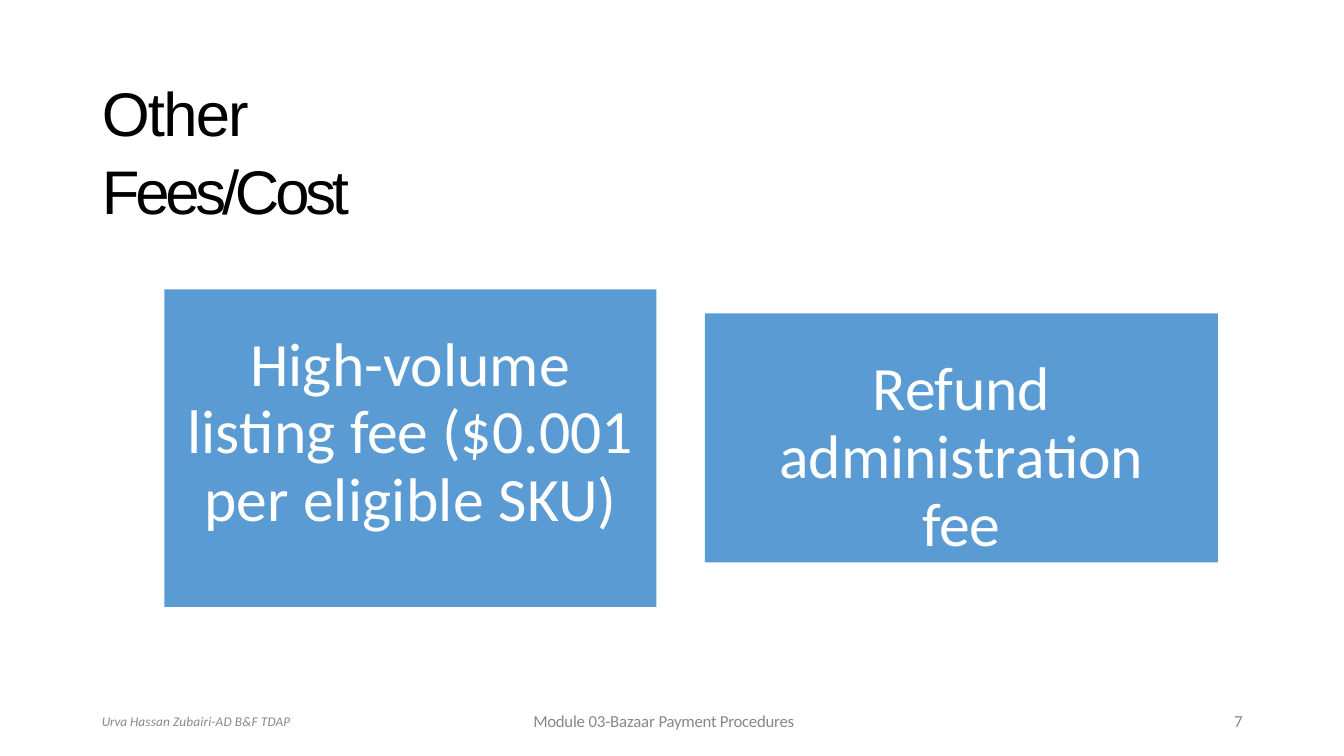
from pptx import Presentation
from pptx.dml.color import RGBColor
from pptx.enum.shapes import MSO_SHAPE
from pptx.enum.text import MSO_ANCHOR, PP_ALIGN
from pptx.util import Pt

PX = 9144  # 100 px to the inch
BLUE, WHITE, GREY, BLACK = "5B9BD4", "FFFFFF", "888888", "000000"


def color(code):
    return RGBColor.from_string(code)


def place(shape, box):
    shape.left, shape.top, shape.width, shape.height = (n * PX for n in box)


def write(shape, parts, size, tint, face="Calibri", inset=(0, 0, 0, 0),
          align=PP_ALIGN.LEFT, line=None, slant=False):
    """Fill a shape with one paragraph of (text, letter spacing) parts."""
    frame = shape.text_frame
    frame.word_wrap = True
    frame.vertical_anchor = MSO_ANCHOR.TOP
    (frame.margin_left, frame.margin_top,
     frame.margin_right, frame.margin_bottom) = (n * PX for n in inset)
    para = frame.paragraphs[0]
    para.alignment = align
    para.line_spacing = line
    for text, gap in parts:
        run = para.add_run()
        run.text = text
        font = run.font
        font.name, font.size, font.italic = face, Pt(size), slant
        font.color.rgb = color(tint)
        run._r.get_or_add_rPr().set("spc", str(round(gap * 100)))


def add_title(slide, box):
    title = slide.shapes.title
    place(title, box)
    write(title, [("Other ", -1.3), ("Fees/Cost", -3)], 44, BLACK, "Arial",
          inset=(1, 4, 0, 0), line=1.05)


def add_card(slide, box, parts, side):
    card = slide.shapes.add_shape(MSO_SHAPE.RECTANGLE, *(n * PX for n in box))
    card.shadow.inherit = False
    card.fill.solid()
    card.fill.fore_color.rgb = color(BLUE)
    card.line.fill.background()
    write(card, parts, 44, WHITE, inset=(side, 42, side, 0),
          align=PP_ALIGN.CENTER, line=0.92)


def add_note(slide, box, parts, size, line, slant=False):
    note = slide.shapes.add_textbox(*(n * PX for n in box))
    write(note, parts, size, GREY, inset=(1, 0, 0, 0), line=Pt(line),
          slant=slant)


def add_footer(slide, box):
    left, top, width, height = box
    add_note(slide, (left, top + 1, 196, 16),
             [("Urva ", -0.1), ("Hassan Zubairi-AD B&F TDAP", 0.1)],
             9.5, 10.2, slant=True)
    add_note(slide, (left + 428, top, 277, height),
             [("Module ", -0.2), ("03-Bazaar ", -0.1),
              ("Payment Procedures", -0.2)], 12, 12.4)
    add_note(slide, (left + width - 14, top, 14, height), [("7", 0)], 12, 12.4)


def main():
    deck = Presentation()
    deck.slide_width, deck.slide_height = 1333 * PX, 750 * PX
    slide = deck.slides.add_slide(deck.slide_layouts[5])

    # Heading
    add_title(slide, (100, 67, 402, 77))
    # Fee cards
    add_card(slide, (163, 287, 488, 315),
             [("High-volume listing ", 0.1), ("fee ", -0.2), ("($0.001 ", 0.1),
              ("per ", 0), ("eligible ", 0.2), ("SKU)", -0.1)], 22)
    add_card(slide, (699, 311, 509, 247),
             [("Refund ", -0.2), ("administration ", 0), ("fee", -0.2)], 61)
    # Footer line
    add_footer(slide, (100, 708, 1137, 19))

    deck.save("out.pptx")


if __name__ == "__main__":
    main()
